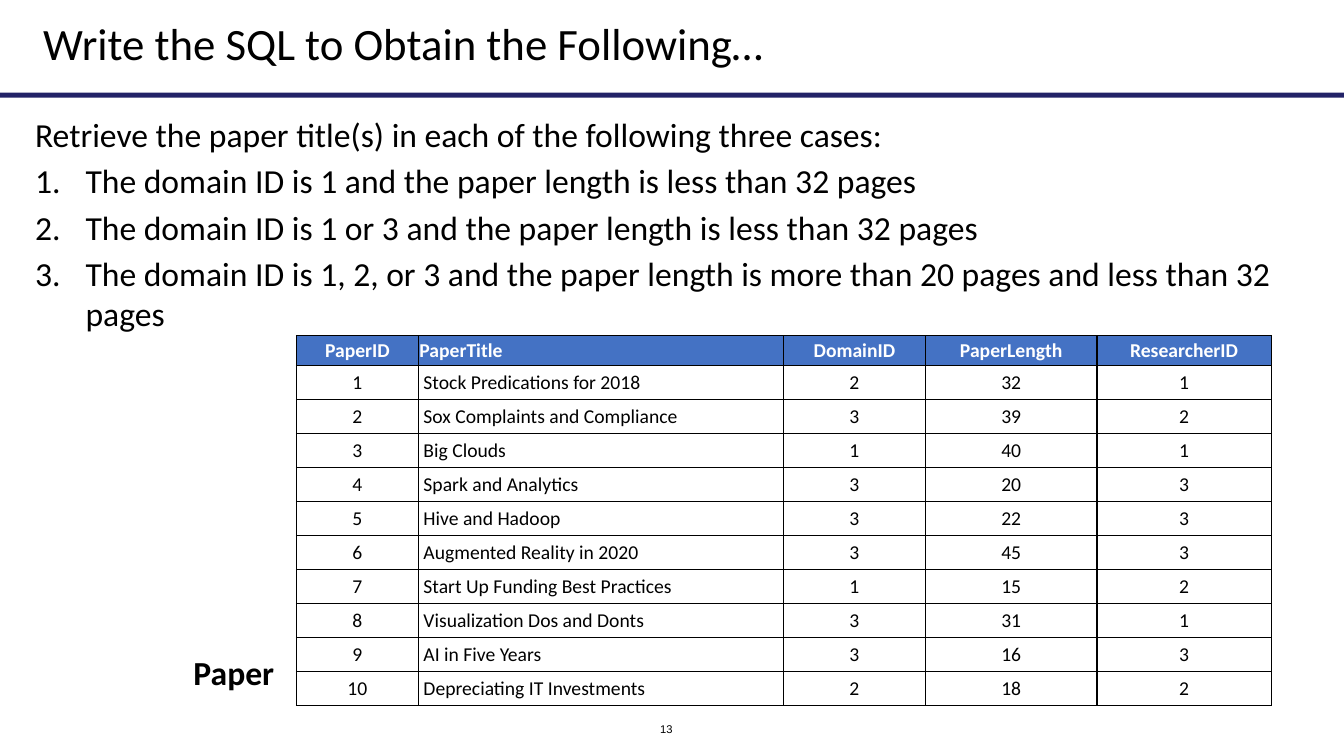
from lxml.etree import SubElement
from pptx import Presentation
from pptx.dml.color import RGBColor
from pptx.enum.shapes import MSO_SHAPE
from pptx.enum.text import MSO_ANCHOR, MSO_AUTO_SIZE, PP_ALIGN
from pptx.oxml.ns import qn
from pptx.util import Pt

SCALE = 9144  # EMU per px, 100 px to the inch
COLORS = {"ink": "000000", "paper": "FFFFFF", "rule": "222267", "head": "4472C4"}
LEFT, MID = PP_ALIGN.LEFT, PP_ALIGN.CENTER

TASKS = [
    "The domain ID is 1 and the paper length is less than 32 pages",
    "The domain ID is 1 or 3 and the paper length is less than 32 pages",
    "The domain ID is 1, 2, or 3 and the paper length is more than 20 pages "
    "and less than 32 pages",
]
HEADS = ["PaperID", "PaperTitle", "DomainID", "PaperLength", "ResearcherID"]
WIDTHS = [121, 362, 141, 170, 173]
PAPERS = [
    (1, "Stock Predications for 2018", 2, 32, 1),
    (2, "Sox Complaints and Compliance", 3, 39, 2),
    (3, "Big Clouds", 1, 40, 1),
    (4, "Spark and Analytics", 3, 20, 3),
    (5, "Hive and Hadoop", 3, 22, 3),
    (6, "Augmented Reality in 2020", 3, 45, 3),
    (7, "Start Up Funding Best Practices", 1, 15, 2),
    (8, "Visualization Dos and Donts", 3, 31, 1),
    (9, "AI in Five Years", 3, 16, 3),
    (10, "Depreciating IT Investments", 2, 18, 2),
]


def emu(*px):
    return [n * SCALE for n in px]


def color(name):
    return RGBColor.from_string(COLORS[name])


class Deck:
    def __init__(self, wide, high):
        self.file = Presentation()
        self.file.slide_width, self.file.slide_height = emu(wide, high)
        self.slide = self.file.slides.add_slide(self.file.slide_layouts[6])

    def style(self, para, size, bold=False, ink="ink", face="Calibri", align=LEFT):
        para.alignment = align
        font = para.font
        font.name, font.size, font.bold = face, Pt(size), bold
        font.color.rgb = color(ink)

    def bar(self, *box, fill):
        bar = self.slide.shapes.add_shape(MSO_SHAPE.RECTANGLE, *emu(*box))
        bar.shadow.inherit = False
        bar.fill.solid()
        bar.fill.fore_color.rgb = color(fill)
        bar.line.fill.background()

    def text(self, *box, words, size, anchor=MSO_ANCHOR.TOP, wrap=True, **look):
        frame = self.slide.shapes.add_textbox(*emu(*box)).text_frame
        frame.word_wrap = wrap
        frame.auto_size = MSO_AUTO_SIZE.NONE
        frame.vertical_anchor = anchor
        frame.text = words
        self.style(frame.paragraphs[0], size, **look)
        return frame

    def steps(self, frame, items, size, indent):
        for item in items:
            para = frame.add_paragraph()
            para.text = item
            para.space_before = Pt(4.3)
            props = para._p.get_or_add_pPr()
            props.set("marL", str(indent * SCALE))
            props.set("indent", str(-indent * SCALE))
            SubElement(props, qn("a:buFont"), typeface="+mj-lt")
            SubElement(props, qn("a:buAutoNum"), type="arabicPeriod")
            self.style(para, size)

    def edge(self, cell):
        props = cell._tc.get_or_add_tcPr()
        for spot, side in enumerate("LRTB"):
            line = SubElement(props, qn(f"a:ln{side}"), w=str(Pt(1)))
            fill = SubElement(line, qn("a:solidFill"))
            SubElement(fill, qn("a:srgbClr"), val=COLORS["ink"])
            props.insert(spot, line)

    def cell(self, cell, value, head, align):
        cell.text = str(value)
        pads = (1, 1, 1, 0) if head else (5, 5, 5, 5)
        (cell.margin_left, cell.margin_top,
         cell.margin_right, cell.margin_bottom) = emu(*pads)
        cell.vertical_anchor = MSO_ANCHOR.MIDDLE if head else MSO_ANCHOR.BOTTOM
        if head:
            cell.fill.solid()
            cell.fill.fore_color.rgb = color("head")
        else:
            cell.fill.background()
        self.edge(cell)
        self.style(cell.text_frame.paragraphs[0], 14, bold=head,
                   ink="paper" if head else "ink", align=align)

    def table(self, left, top, widths, rows, tall, short):
        high = tall + short * (len(rows) - 1)
        box = emu(left, top, sum(widths), high)
        grid = self.slide.shapes.add_table(len(rows), len(widths), *box).table
        grid.horz_banding = False
        for col, wide in zip(grid.columns, widths):
            col.width = wide * SCALE
        for r, row in enumerate(rows):
            grid.rows[r].height = (short if r else tall) * SCALE
            for c, value in enumerate(row):
                self.cell(grid.cell(r, c), value, r == 0, LEFT if c == 1 else MID)


def main():
    deck = Deck(1333, 750)

    # Title, rule and page number
    deck.bar(0, 92, 1333, 5, fill="rule")
    deck.text(600, 711, 122, 24, words="13", size=8, face="Arial",
              align=MID, anchor=MSO_ANCHOR.MIDDLE)
    deck.text(33, 8, 1075, 68, words="Write the SQL to Obtain the Following…",
              size=32, anchor=MSO_ANCHOR.MIDDLE)

    # Task list
    body = deck.text(
        25, 108, 1275, 242, size=24,
        words="Retrieve the paper title(s) in each of the following three cases:")
    deck.steps(body, TASKS, size=24, indent=50)

    # Paper table and its label
    deck.table(294, 333, WIDTHS, [HEADS, *PAPERS], tall=30, short=33)
    deck.text(182, 642, 101, 50, words="Paper", size=24, bold=True, wrap=False)

    deck.file.save("out.pptx")


if __name__ == "__main__":
    main()
